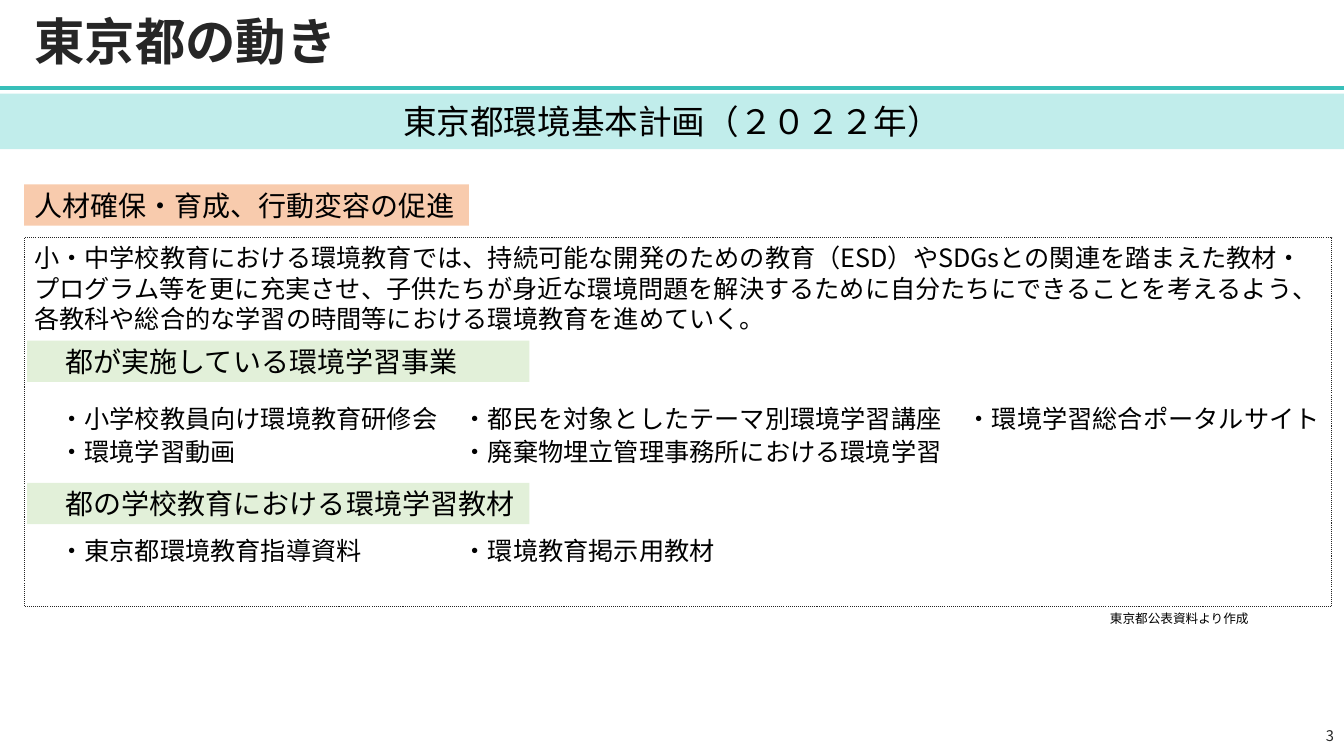
from lxml import etree
from pptx import Presentation
from pptx.dml.color import RGBColor
from pptx.enum import dml, shapes, text
from pptx.oxml import ns
from pptx.util import Inches, Pt

FONT = "Noto Sans CJK JP"
BLACK = RGBColor(0x00, 0x00, 0x00)
CHARCOAL = RGBColor(0x26, 0x26, 0x26)
TEAL = RGBColor(0x37, 0xBF, 0xB9)
PALE_TEAL = RGBColor(0xC1, 0xED, 0xEB)
PEACH = RGBColor(0xF8, 0xCB, 0xAD)
PALE_GREEN = RGBColor(0xE2, 0xF0, 0xD9)

LEFT, CENTER, RIGHT, JUSTIFY = (
    text.PP_ALIGN.LEFT, text.PP_ALIGN.CENTER, text.PP_ALIGN.RIGHT, text.PP_ALIGN.JUSTIFY)
TOP, MIDDLE = text.MSO_ANCHOR.TOP, text.MSO_ANCHOR.MIDDLE

POLICY = (
    "小・中学校教育における環境教育では、持続可能な開発のための教育（ESD）やSDGsとの関連を踏まえた"
    "教材・プログラム等を更に充実させ、子供たちが身近な環境問題を解決するために自分たちにできることを"
    "考えるよう、各教科や総合的な学習の時間等における環境教育を進めていく。")
PROGRAMS = [
    ["小学校教員向け環境教育研修会", "都民を対象としたテーマ別環境学習講座", "環境学習総合ポータルサイト"],
    ["環境学習動画", "廃棄物埋立管理事務所における環境学習"],
]
MATERIALS = [["東京都環境教育指導資料", "環境教育掲示用教材"]]
COLUMN_STOPS = (0.25, 4.25, 9.25)
LINE_GAP, SECTION_GAP = 2, 49.6


def style(paragraph, size, color=BLACK, align=LEFT, bold=False):
    """Set the alignment and the font, for Latin and East Asian text alike."""
    paragraph.alignment = align
    font = paragraph.font
    font.size, font.bold, font.name = Pt(size), bold, FONT
    font.color.rgb = color
    defaults = paragraph._p.pPr.find(ns.qn("a:defRPr"))
    etree.SubElement(defaults, ns.qn("a:ea")).set("typeface", FONT)


def set_column_stops(paragraph):
    """Give a styled paragraph the tab stops of the item columns."""
    stops = etree.Element(ns.qn("a:tabLst"))
    for position in COLUMN_STOPS:
        stop = etree.SubElement(stops, ns.qn("a:tab"))
        stop.set("pos", str(Inches(position)))
        stop.set("algn", "l")
    paragraph._p.pPr.find(ns.qn("a:defRPr")).addprevious(stops)


def add_title(slide, wording):
    """Place and format the title."""
    title = slide.shapes.title
    title.left, title.top, title.width, title.height = map(Inches, (0.24, 0, 12.83, 0.87))
    frame = title.text_frame
    frame.text = wording
    frame.auto_size = text.MSO_AUTO_SIZE.NONE
    frame.vertical_anchor = MIDDLE
    frame.paragraphs[0].line_spacing = 0.9
    style(frame.paragraphs[0], 36, CHARCOAL, bold=True)


def add_title_rule(slide):
    """Draw the line under the title."""
    rule = slide.shapes.add_connector(
        shapes.MSO_CONNECTOR.STRAIGHT, 0, Inches(0.87), Inches(13.33), Inches(0.87))
    rule.line.color.rgb = TEAL
    rule.line.width = Pt(3)
    etree.SubElement(rule._element.spPr, ns.qn("a:effectLst"))


def add_band(slide, box, fill, wording, size, align=JUSTIFY, indent=0):
    """Add a filled heading band."""
    band = slide.shapes.add_shape(shapes.MSO_SHAPE.RECTANGLE, *map(Inches, box))
    band.shadow.inherit = False
    band.fill.solid()
    band.fill.fore_color.rgb = fill
    band.line.fill.background()
    frame = band.text_frame
    frame.text = wording
    frame.vertical_anchor = MIDDLE
    frame.margin_left = Inches(0.1 + indent)
    style(frame.paragraphs[0], size, align=align)


def add_label(slide, box, wording, size, color=BLACK, anchor=TOP):
    """Add a small right-aligned text."""
    frame = slide.shapes.add_textbox(*map(Inches, box)).text_frame
    frame.word_wrap = True
    frame.vertical_anchor = anchor
    frame.text = wording
    style(frame.paragraphs[0], size, color, RIGHT)


def add_policy_box(slide):
    """Add the dotted box with the policy and the columns of items."""
    policy_box = slide.shapes.add_shape(
        shapes.MSO_SHAPE.RECTANGLE, *map(Inches, (0.24, 2.36, 12.97, 3.66)))
    policy_box.shadow.inherit = False
    policy_box.fill.background()
    policy_box.line.color.rgb = CHARCOAL
    policy_box.line.width = Pt(0.75)
    policy_box.line.dash_style = dml.MSO_LINE.ROUND_DOT
    frame = policy_box.text_frame
    frame.vertical_anchor = TOP
    frame.text = POLICY
    frame.paragraphs[0].space_before = Pt(LINE_GAP)
    style(frame.paragraphs[0], 18)
    for section in (PROGRAMS, MATERIALS):
        for index, items in enumerate(section):
            row = frame.add_paragraph()
            row.text = "".join(f"\t・{item}" for item in items)
            row.space_before = Pt(LINE_GAP if index else SECTION_GAP)
            style(row, 18)
            set_column_stops(row)


def main():
    """Build the slide and save it."""
    deck = Presentation()
    deck.slide_width, deck.slide_height = Inches(13.33), Inches(7.5)
    slide = deck.slides.add_slide(deck.slide_layouts[5])
    add_title_rule(slide)
    add_title(slide, "東京都の動き")
    add_band(slide, (0, 0.93, 13.33, 0.55), PALE_TEAL, "東京都環境基本計画（２０２２年）", 24, CENTER)
    add_policy_box(slide)
    add_band(slide, (0.24, 1.83, 4.41, 0.41), PEACH, "人材確保・育成、行動変容の促進", 20)
    for top, heading in ((3.38, "都が実施している環境学習事業"), (4.79, "都の学校教育における環境学習教材")):
        add_band(slide, (0.27, top, 4.98, 0.41), PALE_GREEN, heading, 20, indent=0.28)
    add_label(slide, (7.88, 6.01, 4.6, 0.25), "東京都公表資料より作成", 9)
    add_label(slide, (10.33, 7.1, 3, 0.4), "3", 10.5, CHARCOAL, MIDDLE)
    deck.save("out.pptx")


if __name__ == "__main__":
    main()
